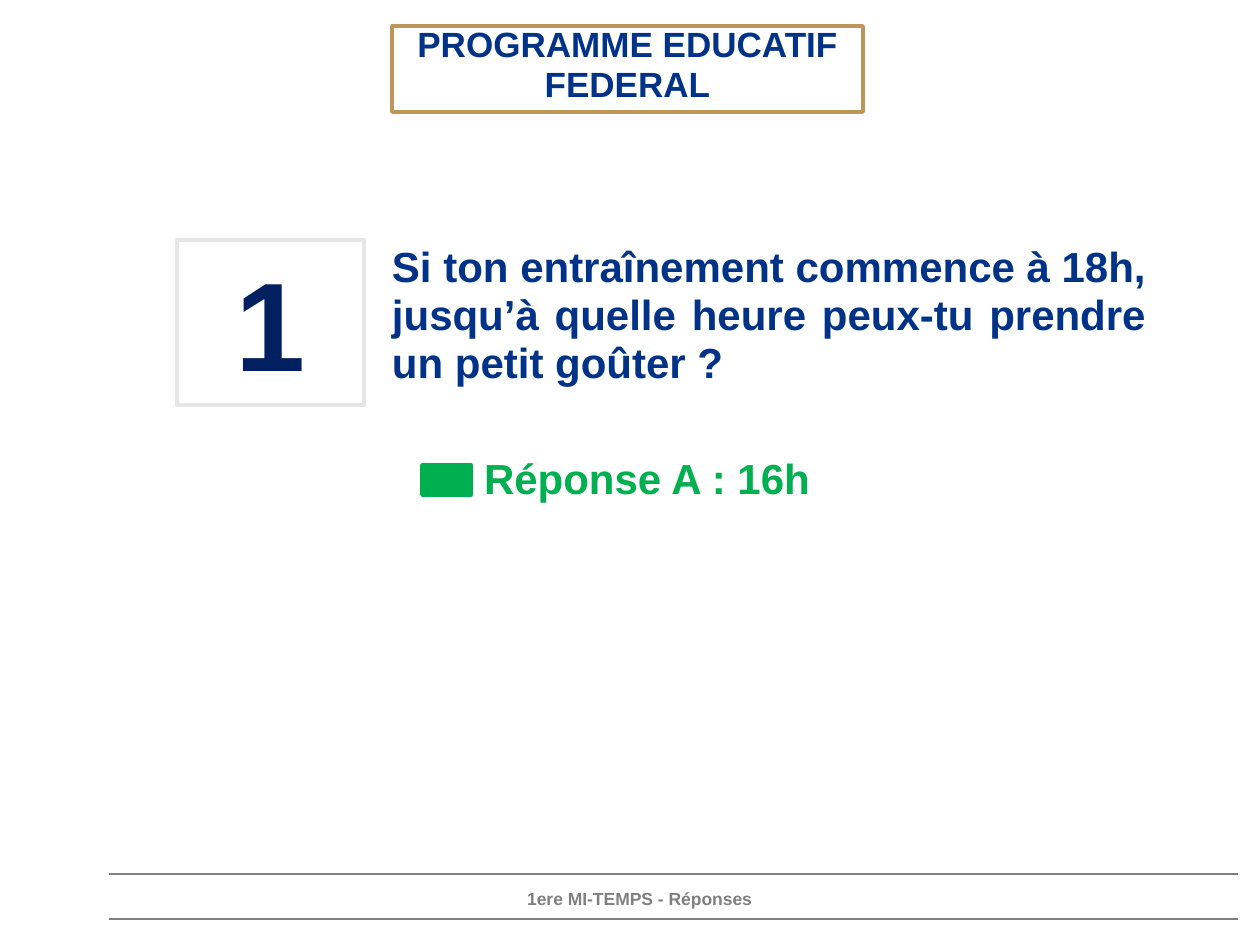
from dataclasses import dataclass
from typing import Optional

from lxml.etree import SubElement
from pptx import Presentation
from pptx.dml.color import RGBColor
from pptx.enum.shapes import MSO_CONNECTOR, MSO_SHAPE
from pptx.enum.text import MSO_ANCHOR, MSO_AUTO_SIZE, PP_ALIGN
from pptx.oxml.ns import qn
from pptx.util import Emu, Pt

EMU_PER_PX = 914400 / 126

WHITE = RGBColor(0xFF, 0xFF, 0xFF)
GOLD = RGBColor(0xBE, 0x96, 0x5A)
BLUE = RGBColor(0x00, 0x32, 0x87)
NAVY = RGBColor(0x00, 0x20, 0x60)
GREEN = RGBColor(0x00, 0xB0, 0x50)
GREY = RGBColor(0x80, 0x80, 0x80)
LIGHT_GREY = RGBColor(0xE6, 0xE6, 0xE6)


@dataclass
class Box:
    left: int
    top: int
    width: int
    height: int
    fill: Optional[RGBColor] = None
    line: Optional[RGBColor] = None


@dataclass
class Label:
    text: str
    size: int
    color: RGBColor
    align: PP_ALIGN = PP_ALIGN.CENTER
    anchor: MSO_ANCHOR = MSO_ANCHOR.TOP
    inset: int = 0
    spacing: float = 0.95


def px(n: int) -> Emu:
    return Emu(round(n * EMU_PER_PX))


def place(sp, box: Box) -> None:
    """Position a shape and give it its fill and outline."""
    sp.left, sp.top = px(box.left), px(box.top)
    sp.width, sp.height = px(box.width), px(box.height)
    if box.fill is not None:
        sp.fill.solid()
        sp.fill.fore_color.rgb = box.fill
    if box.line is not None:
        sp.line.color.rgb = box.line
        sp.line.width = Pt(2)


def write(sp, label: Label) -> None:
    """Set one bold, unbulleted paragraph."""
    tf = sp.text_frame
    tf.word_wrap = True
    tf.auto_size = MSO_AUTO_SIZE.NONE
    tf.vertical_anchor = label.anchor
    tf.margin_left = tf.margin_right = px(label.inset)
    tf.margin_top = tf.margin_bottom = px(label.inset)
    p = tf.paragraphs[0]
    p.alignment = label.align
    p.line_spacing = label.spacing
    p.space_before = Pt(0)
    pPr = p._p.get_or_add_pPr()
    pPr.set("marL", "0")
    pPr.set("indent", "0")
    SubElement(pPr, qn("a:buNone"))
    r = p.add_run()
    r.text = label.text
    r.font.name = "Arial"
    r.font.size = Pt(label.size)
    r.font.bold = True
    r.font.color.rgb = label.color


def add_box(slide, box: Box):
    sp = slide.shapes.add_shape(MSO_SHAPE.RECTANGLE, 0, 0, 0, 0)
    sp.shadow.inherit = False
    place(sp, box)
    return sp


def add_rule(slide, left: int, right: int, y: int) -> None:
    rule = slide.shapes.add_connector(
        MSO_CONNECTOR.STRAIGHT, px(left), px(y), px(right), px(y))
    rule.line.color.rgb = GREY
    rule.line.width = Pt(0.75)
    SubElement(rule._element.spPr, qn("a:effectLst"))


def main() -> None:
    prs = Presentation()
    prs.slide_width, prs.slide_height = px(1260), px(945)
    slide = prs.slides.add_slide(prs.slide_layouts[3])
    heading, question, answer = slide.placeholders

    # Footer rules
    for y in (874, 919):
        add_rule(slide, 109, 1238, y)

    # Heading
    place(heading, Box(392, 26, 471, 86, WHITE, GOLD))
    write(heading, Label("PROGRAMME EDUCATIF FEDERAL", 20, BLUE))

    # Question and its number
    place(question, Box(392, 244, 754, 161))
    write(question, Label(
        "Si ton entraînement commence à 18h, jusqu’à quelle heure "
        "peux-tu prendre un petit goûter ?", 24, BLUE, PP_ALIGN.JUSTIFY))
    number = add_box(slide, Box(177, 240, 187, 165, WHITE, LIGHT_GREY))
    write(number, Label("1", 72, NAVY, anchor=MSO_ANCHOR.BOTTOM, inset=8,
                        spacing=1.0))

    # Answer and its marker
    place(answer, Box(484, 456, 461, 161, WHITE, WHITE))
    write(answer, Label("Réponse A : 16h", 24, GREEN, PP_ALIGN.LEFT))
    add_box(slide, Box(422, 465, 49, 30, GREEN, GREEN))

    # Footer text
    footer = slide.shapes.add_textbox(0, 0, 0, 0)
    place(footer, Box(332, 890, 615, 25))
    write(footer, Label("1ere MI-TEMPS - Réponses", 10, GREY))

    prs.save("out.pptx")


if __name__ == "__main__":
    main()
